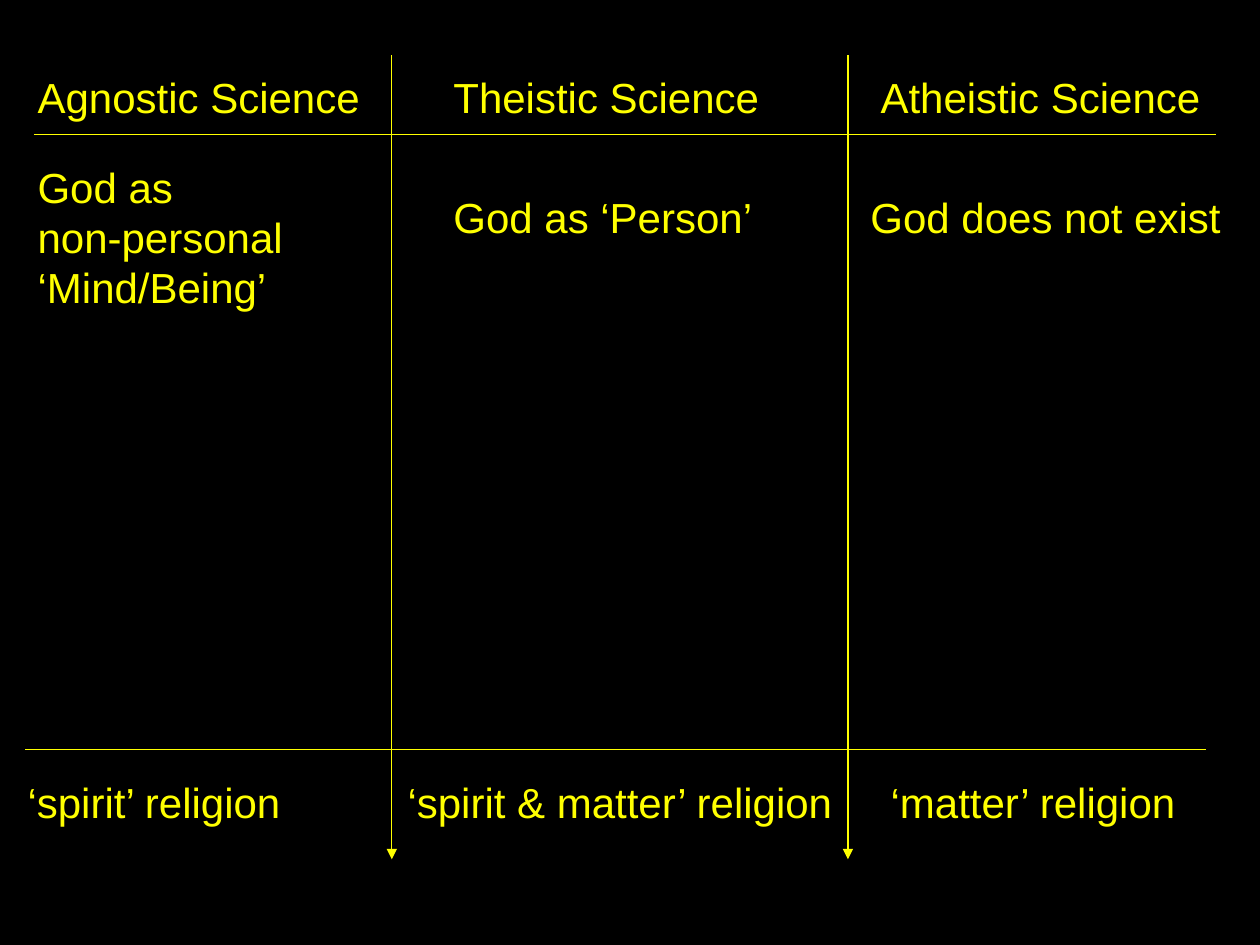
from pptx import Presentation
from pptx.dml.color import RGBColor
from pptx.enum.shapes import MSO_CONNECTOR
from pptx.enum.text import MSO_AUTO_SIZE, PP_ALIGN
from pptx.oxml.ns import qn
from pptx.util import Inches, Pt
from lxml.etree import SubElement

COLORS = {"background": "000000", "ink": "FFFF00"}


class Board:
    """Style and current slide; lengths are cells of a 100 by 75 grid."""

    columns, rows = 100, 75
    font, size, line_width = "Arial", 24, 0.75

    def __init__(self, deck):
        self.cell_width = deck.slide_width / self.columns
        self.cell_height = deck.slide_height / self.rows
        self.page = deck.slides.add_slide(deck.slide_layouts[6])
        fill = self.page.background.fill
        fill.solid()
        fill.fore_color.rgb = self.color("background")

    def color(self, name):
        return RGBColor.from_string(COLORS[name])

    def x(self, columns):
        return round(columns * self.cell_width)

    def y(self, rows):
        return round(rows * self.cell_height)

    def line(self, left, top, right, bottom, arrow=False):
        connector = self.page.shapes.add_connector(
            MSO_CONNECTOR.STRAIGHT,
            self.x(left), self.y(top), self.x(right), self.y(bottom))
        connector.line.color.rgb = self.color("ink")
        connector.line.width = Pt(self.line_width)
        properties = connector._element.spPr
        if arrow:
            SubElement(properties.find(qn("a:ln")), qn("a:tailEnd"), type="triangle")
        SubElement(properties, qn("a:effectLst"))

    def text(self, left, top, lines, width=29.1, height=5, align=PP_ALIGN.LEFT):
        box = self.page.shapes.add_textbox(
            self.x(left), self.y(top), self.x(width), self.y(height))
        frame = box.text_frame
        frame.word_wrap = True
        frame.auto_size = MSO_AUTO_SIZE.SHAPE_TO_FIT_TEXT
        para = frame.paragraphs[0]
        para.alignment = align
        for index, words in enumerate(lines):
            if index:
                para.add_line_break()
            span = para.add_run()
            span.text = words
            span.font.name = self.font
            span.font.size = Pt(self.size)
            span.font.color.rgb = self.color("ink")


def main():
    deck = Presentation()
    deck.slide_width, deck.slide_height = Inches(10), Inches(7.5)
    board = Board(deck)

    # Column dividers with arrowheads, then the two rules
    for column in (31.1, 67.3):
        board.line(column, 4.4, column, 68.2, arrow=True)
    board.line(2.7, 10.7, 96.5, 10.7)
    board.line(2, 59.5, 95.7, 59.5)

    # Column headings
    for left, kind in ((2, "Agnostic"), (35, "Theistic"), (68.9, "Atheistic")):
        board.text(left, 5.2, [f"{kind} Science"])

    # View of God in each column
    board.text(2, 12.3, ["God as", "non-personal ‘Mind/Being’"], width=26.8, height=13)
    board.text(35, 14.7, ["God as ‘Person’"])
    board.text(68.1, 14.7, ["God does not exist"], width=29.9)

    # Resulting religion
    board.text(1.2, 61.1, ["‘spirit’ religion"])
    board.text(30.3, 61.1, ["‘spirit & matter’ religion"], width=37.8,
               align=PP_ALIGN.CENTER)
    board.text(69.7, 61.1, ["‘matter’ religion"])

    deck.save("out.pptx")


if __name__ == "__main__":
    main()
